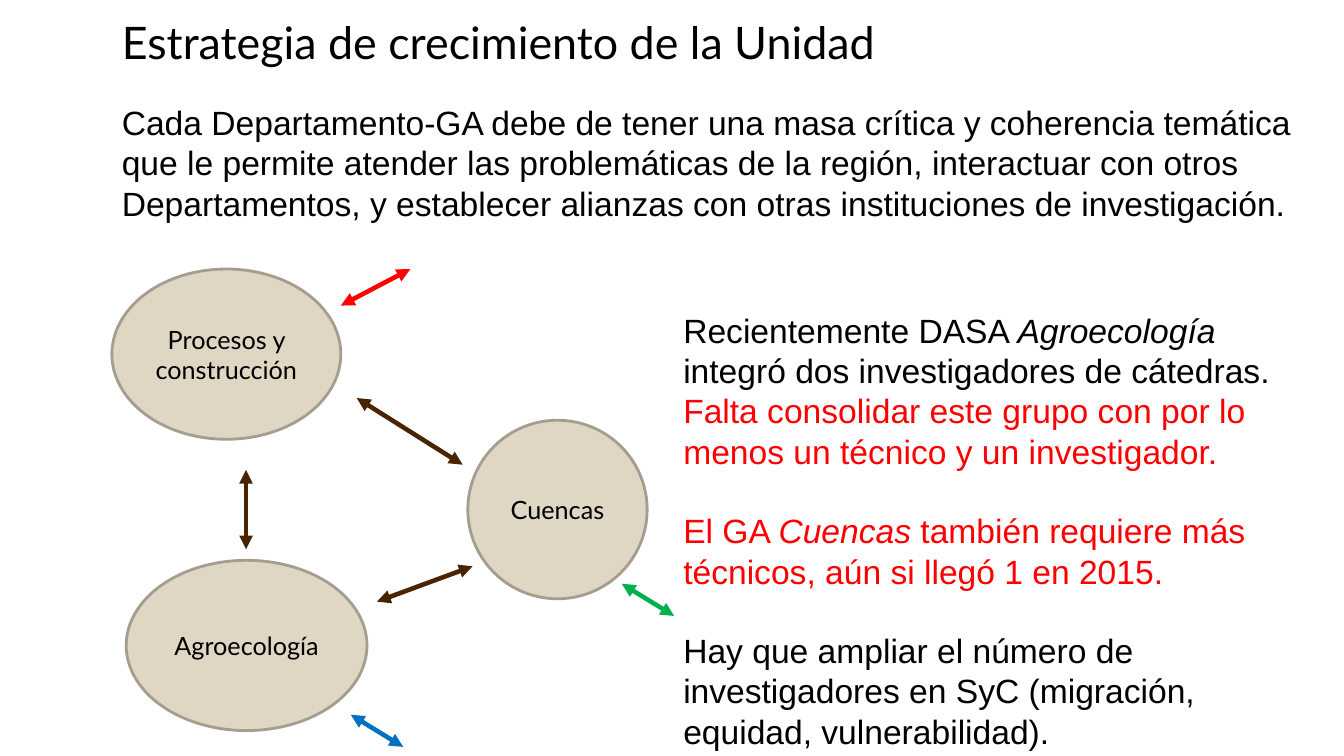
from dataclasses import dataclass

from lxml.etree import SubElement
from pptx import Presentation
from pptx.dml.color import RGBColor
from pptx.enum.shapes import MSO_CONNECTOR as Connector, MSO_SHAPE as Shape
from pptx.enum.text import MSO_ANCHOR as Anchor, PP_ALIGN as Align
from pptx.oxml.ns import qn
from pptx.slide import Slide
from pptx.text.text import _Paragraph as Paragraph
from pptx.util import Cm, Pt


@dataclass(frozen=True)
class Theme:
    heading_font: str = "Lato"
    body_font: str = "Arial"
    title_size: float = 32
    body_size: float = 24
    label_size: float = 18
    paragraph_gap: float = 28
    outline_width: float = 2
    arrow_width: float = 3.25
    black: str = "000000"
    red: str = "FF0000"
    green: str = "00B050"
    blue: str = "0070C0"
    brown: str = "482400"
    sand: str = "DFD6C3"
    outline: str = "A59E90"


THEME = Theme()


@dataclass(frozen=True)
class Area:
    left: float
    top: float
    width: float
    height: float

    def lengths(self) -> tuple[Cm, Cm, Cm, Cm]:
        return Cm(self.left), Cm(self.top), Cm(self.width), Cm(self.height)


@dataclass(frozen=True)
class Group:
    label: str
    area: Area


@dataclass(frozen=True)
class Arrow:
    start: tuple[float, float]
    end: tuple[float, float]
    color: str = THEME.brown


@dataclass(frozen=True)
class Span:
    text: str
    color: str = THEME.black
    italic: bool = False


@dataclass(frozen=True)
class TextBlock:
    area: Area
    paragraphs: list[list[Span]]
    font: str = THEME.body_font
    size: float = THEME.body_size
    anchor: Anchor = Anchor.BOTTOM


GROUPS = [
    Group("Agroecología", Area(3.18, 14.12, 6.07, 4.29)),
    Group("Procesos y construcción", Area(2.82, 6.78, 5.77, 4.29)),
    Group("Cuencas", Area(11.79, 10.59, 4.52, 4.5)),
]

ARROWS = [
    Arrow((9.5, 15.16), (11.91, 14.27)),
    Arrow((6.2, 11.84), (6.2, 13.84)),
    Arrow((8.99, 10.03), (11.66, 11.71)),
    Arrow((15.67, 14.71), (16.99, 15.52), THEME.green),
    Arrow((8.84, 18.01), (10.16, 18.82), THEME.blue),
    Arrow((8.59, 7.7), (10.34, 6.78), THEME.red),
]

TITLE = TextBlock(
    Area(2.82, 0.25, 27.69, 1.63),
    [[Span("Estrategia de crecimiento de la Unidad")]],
    THEME.heading_font, THEME.title_size, Anchor.TOP,
)
INTRODUCTION = TextBlock(
    Area(2.82, 2.36, 30.38, 3.38),
    [[Span("Cada Departamento-GA debe de tener una masa crítica y coherencia "
           "temática que le permite atender las problemáticas de la región, "
           "interactuar con otros Departamentos, y establecer alianzas con "
           "otras instituciones de investigación.")]],
)
NEEDS = TextBlock(
    Area(16.97, 5.51, 16.21, 13.54),
    [
        [Span("Recientemente DASA "),
         Span("Agroecología ", italic=True),
         Span("integró dos investigadores de cátedras. "),
         Span("Falta consolidar este grupo con por lo menos un técnico y un "
              "investigador.", THEME.red)],
        [Span("El GA ", THEME.red),
         Span("Cuencas ", THEME.red, italic=True),
         Span("también requiere más técnicos, aún si llegó 1 en 2015.", THEME.red)],
        [Span("Hay que ampliar el número de investigadores en SyC (migración, "
              "equidad, vulnerabilidad).")],
    ],
)


def rgb(color: str) -> RGBColor:
    return RGBColor.from_string(color)


def add_span(para: Paragraph, span: Span, font: str, size: float) -> None:
    run = para.add_run()
    run.text = span.text
    run.font.name = font
    run.font.size = Pt(size)
    run.font.italic = span.italic
    run.font.color.rgb = rgb(span.color)


def add_group(page: Slide, group: Group) -> None:
    ellipse = page.shapes.add_shape(Shape.OVAL, *group.area.lengths())
    ellipse.shadow.inherit = False
    ellipse.fill.solid()
    ellipse.fill.fore_color.rgb = rgb(THEME.sand)
    ellipse.line.color.rgb = rgb(THEME.outline)
    ellipse.line.width = Pt(THEME.outline_width)
    frame = ellipse.text_frame
    frame.word_wrap = True
    frame.vertical_anchor = Anchor.MIDDLE
    para = frame.paragraphs[0]
    para.alignment = Align.CENTER
    add_span(para, Span(group.label), THEME.heading_font, THEME.label_size)


def add_arrow(page: Slide, arrow: Arrow) -> None:
    """Draw a straight line with a triangle at both ends."""
    ends = [Cm(value) for value in (*arrow.start, *arrow.end)]
    connector = page.shapes.add_connector(Connector.STRAIGHT, *ends)
    connector.line.color.rgb = rgb(arrow.color)
    connector.line.width = Pt(THEME.arrow_width)
    line = connector.line._get_or_add_ln()
    for tag in ("a:headEnd", "a:tailEnd"):
        SubElement(line, qn(tag), type="triangle")
    SubElement(connector._element.spPr, qn("a:effectLst"))


def add_text(page: Slide, block: TextBlock) -> None:
    box = page.shapes.add_textbox(*block.area.lengths())
    frame = box.text_frame
    frame.word_wrap = True
    frame.vertical_anchor = block.anchor
    for index, spans in enumerate(block.paragraphs):
        para = frame.add_paragraph() if index else frame.paragraphs[0]
        if index:
            para.space_before = Pt(THEME.paragraph_gap)
        for span in spans:
            add_span(para, span, block.font, block.size)


def main() -> None:
    deck = Presentation()
    deck.slide_width, deck.slide_height = Cm(33.87), Cm(19.05)
    page = deck.slides.add_slide(deck.slide_layouts[6])
    for group in GROUPS:
        add_group(page, group)
    for arrow in ARROWS:
        add_arrow(page, arrow)
    for block in (TITLE, INTRODUCTION, NEEDS):
        add_text(page, block)
    deck.save("out.pptx")


if __name__ == "__main__":
    main()
